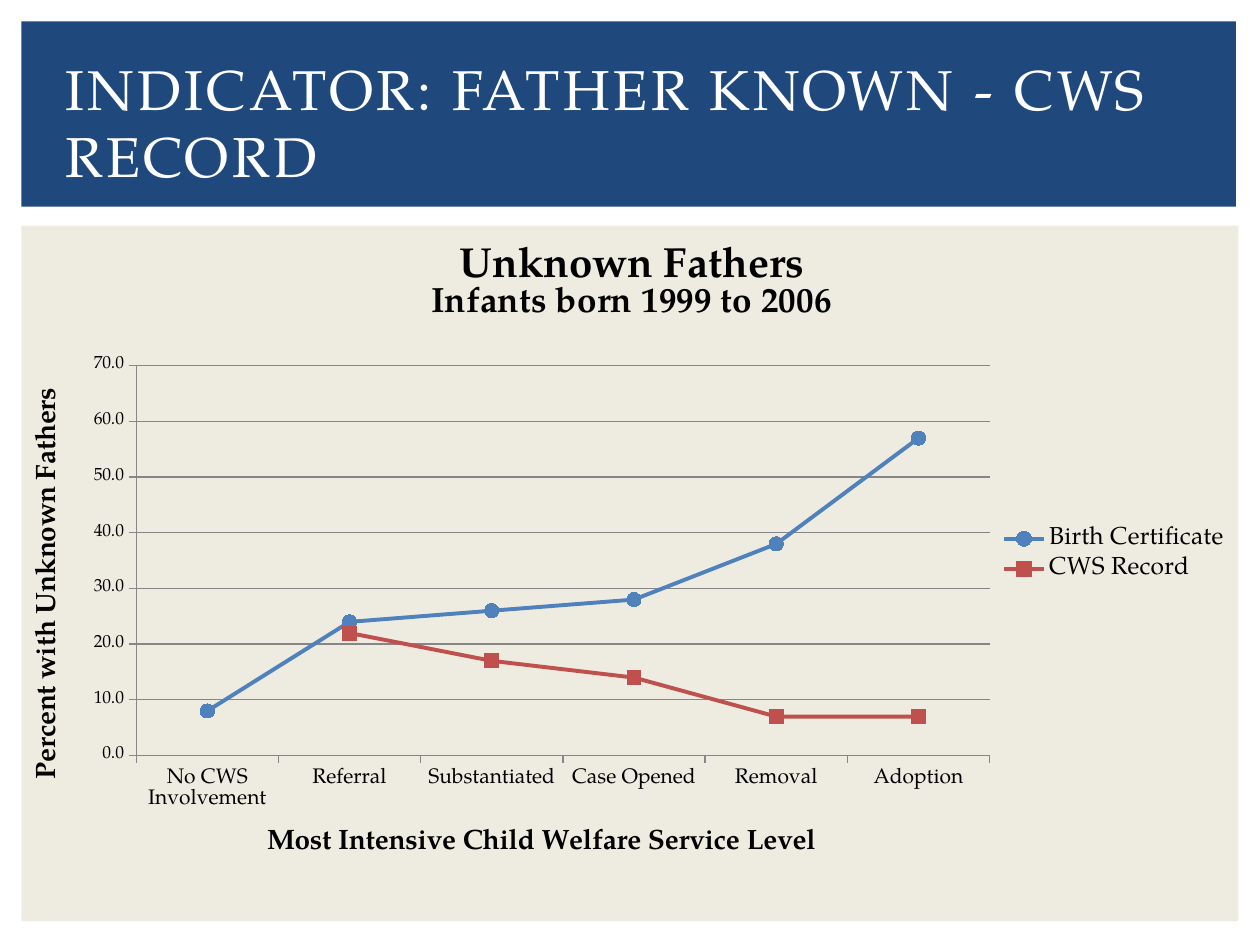
"""Build a slide with a line chart of unknown fathers by service level."""
import pptx
import pptx.chart.data
import pptx.dml.color
import pptx.enum.chart
import pptx.enum.shapes
import pptx.enum.text
import pptx.oxml
import pptx.oxml.ns
import pptx.util

HUES = {"navy": "1F497D", "sand": "EEECE1", "white": "FFFFFF", "black": "000000",
        "blue": "4F81BD", "red": "C0504D", "gray": "868686"}
FACE = "TeX Gyre Pagella"
RGB = pptx.dml.color.RGBColor.from_string
Pt, Inches = pptx.util.Pt, pptx.util.Inches
kinds = pptx.enum.chart


def style(font, size, hue="black", bold=False):
    looks = {"name": FACE, "size": Pt(size), "bold": bold}
    for key, val in looks.items():
        setattr(font, key, val)
    font.color.rgb = RGB(HUES[hue])


def place(owner, shares, inner=False):
    node = owner.get_or_add_layout() if hasattr(owner, "get_or_add_layout") else owner.find(
        pptx.oxml.ns.qn("c:layout"))
    if node is None:
        node = pptx.oxml.parse_xml(f'<c:layout {pptx.oxml.ns.nsdecls("c")}/>')
        owner.insert(0, node)
    for kid in list(node):
        node.remove(kid)
    tags = [("layoutTarget", "inner")] if inner else []
    tags += [("xMode", "edge"), ("yMode", "edge")]
    tags += [(tag, round(share / 100, 4)) for tag, share in zip("xywh", shares)]
    body = "".join(f'<c:{tag} val="{val}"/>' for tag, val in tags)
    node.append(pptx.oxml.parse_xml(
        f'<c:manualLayout {pptx.oxml.ns.nsdecls("c")}>{body}</c:manualLayout>'))


deck = pptx.Presentation()
deck.slide_width, deck.slide_height = Inches(10), Inches(7.5)
slide = deck.slides.add_slide(deck.slide_layouts[6])

panels = [("sand", 0.17, 1.79, 9.66, 5.52), ("navy", 0.17, 0.17, 9.64, 1.47)]
for hue, *box in panels:
    panel = slide.shapes.add_shape(pptx.enum.shapes.MSO_SHAPE.RECTANGLE, *map(Inches, box))
    panel.shadow.inherit = False
    panel.fill.solid()
    panel.fill.fore_color.rgb = RGB(HUES[hue])
    panel.line.fill.background()

head = slide.shapes.add_textbox(*map(Inches, (0.42, 0.39, 9.17, 1.15))).text_frame
frame = {"word_wrap": True, "vertical_anchor": pptx.enum.text.MSO_ANCHOR.MIDDLE}
for key, val in frame.items():
    setattr(head, key, val)
run = head.paragraphs[0].add_run()
run.text = "INDICATOR: FATHER KNOWN - CWS RECORD"
style(run.font, 32, "white")
run.font._element.set("spc", "200")

data = pptx.chart.data.CategoryChartData(number_format="0.0")
data.categories = ["No CWS Involvement", "Referral", "Substantiated",
                   "Case Opened", "Removal", "Adoption"]
data.add_series("Birth Certificate", [8, 24, 26, 28, 38, 57])
data.add_series("CWS Record", [None, 22, 17, 14, 7, 7])
chart = slide.shapes.add_chart(kinds.XL_CHART_TYPE.LINE_MARKERS,
                               *map(Inches, (0.17, 1.75, 9.69, 5.29)), data).chart
style(chart.font, 10)

title = chart.chart_title.text_frame
for row, (text, size) in enumerate([("Unknown Fathers", 24), ("Infants born 1999 to 2006", 20)]):
    para = title.add_paragraph() if row else title.paragraphs[0]
    run = para.add_run()
    run.text = text
    style(run.font, size, bold=True)

axes = [(chart.category_axis, "Most Intensive Child Welfare Service Level", 12, (19.7, 90.1)),
        (chart.value_axis, "Percent with Unknown Fathers", 10, (0.5, 24.4))]
for axis, text, size, spot in axes:
    run = axis.axis_title.text_frame.paragraphs[0].add_run()
    run.text = text
    style(run.font, 16, bold=True)
    place(axis.axis_title._element, spot)
    style(axis.tick_labels.font, size)
    axis.major_tick_mark = kinds.XL_TICK_MARK.OUTSIDE
    axis.format.line.color.rgb = RGB(HUES["gray"])

scale = chart.value_axis
limits = {"minimum_scale": 0, "maximum_scale": 70, "major_unit": 10, "has_major_gridlines": True}
for key, val in limits.items():
    setattr(scale, key, val)
scale.major_gridlines.format.line.color.rgb = RGB(HUES["gray"])
scale.tick_labels.number_format = "0.0"
scale.tick_labels.number_format_is_linked = False

chart.has_legend = True
chart.legend.position = kinds.XL_LEGEND_POSITION.RIGHT
chart.legend.include_in_layout = False
style(chart.legend.font, 14)

plot = chart.plots[0]
plot.vary_by_categories = False
marks = [("blue", kinds.XL_MARKER_STYLE.CIRCLE), ("red", kinds.XL_MARKER_STYLE.SQUARE)]
for line, (hue, mark) in zip(plot.series, marks):
    line.smooth = False
    line.format.line.width = Pt(2.25)
    line.format.line.color.rgb = RGB(HUES[hue])
    line.marker.style, line.marker.size = mark, 8
    line.marker.format.fill.solid()
    line.marker.format.fill.fore_color.rgb = RGB(HUES[hue])
    line.marker.format.line.color.rgb = RGB(HUES[hue])
place(plot._element.getparent(), (9.4, 21.8, 69.9, 58.5), inner=True)

deck.save("out.pptx")
